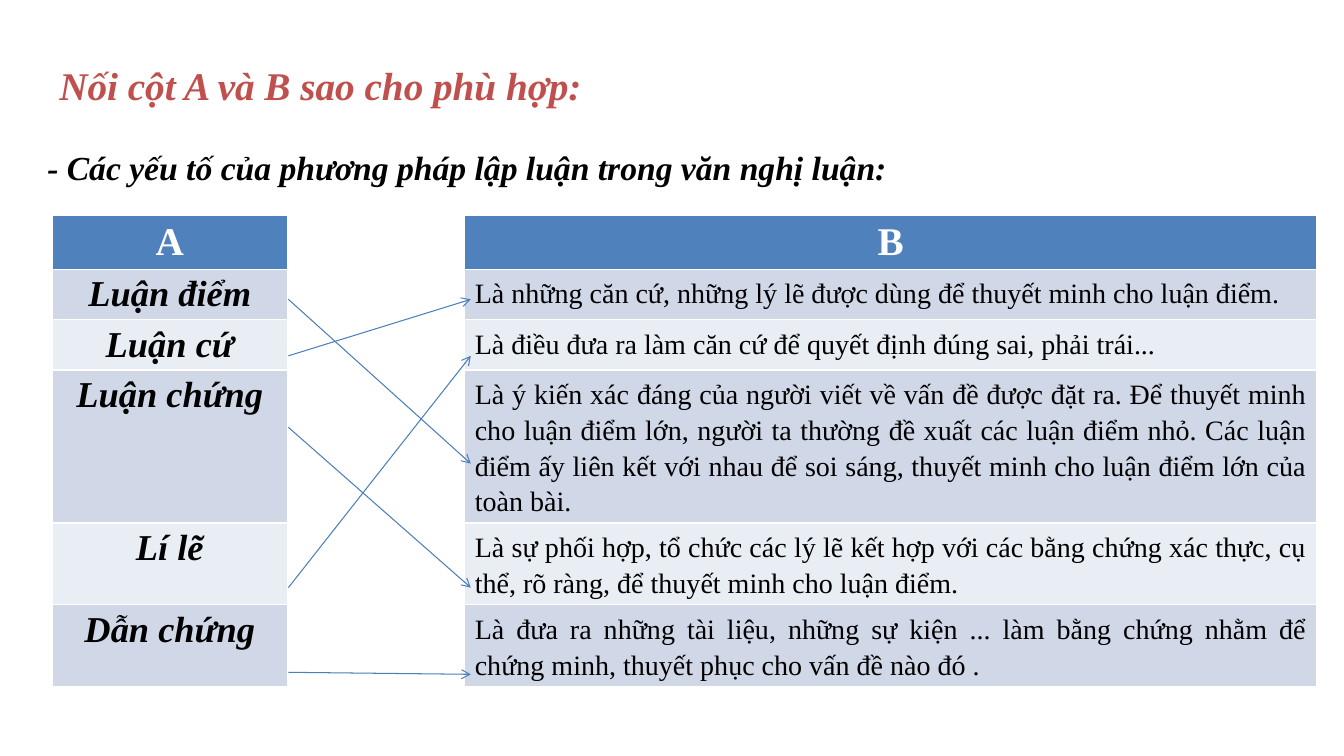
from dataclasses import dataclass

from lxml.etree import SubElement as Sub
from pptx import Presentation
from pptx.dml.color import RGBColor as Rgb
from pptx.enum.shapes import MSO_CONNECTOR as Link
from pptx.enum.text import MSO_AUTO_SIZE as Fit, PP_ALIGN as Align
from pptx.oxml.ns import qn
from pptx.util import Inches, Pt


@dataclass(frozen=True)
class Theme:
    font: str = "Times New Roman"
    white: str = "FFFFFF"
    black: str = "000000"
    red: str = "C0504D"
    blue: str = "4F81BD"
    line: str = "4B7EBC"
    bands: tuple = ("D0D8E8", "E9EDF4")
    title: int = 28
    term: int = 26
    lead: int = 24
    body: int = 20
    space: float = 1.15
    stroke: float = 0.75


class Page:
    """Draws on one slide; lengths are percent of its width or height."""

    def __init__(self, deck, theme):
        self.deck, self.theme = deck, theme
        self.slide = deck.slides.add_slide(deck.slide_layouts[6])
        self.shapes = self.slide.shapes

    def x(self, share):
        return round(self.deck.slide_width * share / 100)

    def y(self, share):
        return round(self.deck.slide_height * share / 100)

    def box(self, left, top, wide, high):
        return self.x(left), self.y(top), self.x(wide), self.y(high)

    def label(self, frame, text, size, color, bold=True, slant=True,
              align=Align.JUSTIFY):
        para = frame.paragraphs[0]
        para.text, para.alignment = text, align
        if align == Align.JUSTIFY:
            para.line_spacing = self.theme.space
        font = para.font
        font.name, font.size = self.theme.font, Pt(size)
        font.bold, font.italic = bold, slant
        font.color.rgb = Rgb.from_string(color)

    def text(self, area, text, size, color, wrap=True):
        frame = self.shapes.add_textbox(*self.box(*area)).text_frame
        frame.word_wrap = wrap
        frame.auto_size = Fit.SHAPE_TO_FIT_TEXT
        self.label(frame, text, size, color)

    def cell(self, cell, fill, text, *style, **more):
        cell.fill.solid()
        cell.fill.fore_color.rgb = Rgb.from_string(fill)
        if text:
            self.label(cell.text_frame, text, *style, **more)

    def table(self, area, cols, row, heads, pairs):
        """Two columns of text with one merged white gap between them."""
        look = self.theme
        shape = self.shapes.add_table(len(pairs) + 1, len(cols), *self.box(*area))
        grid = shape.table
        for col, wide in zip(grid.columns, cols):
            col.width = self.x(wide)
        for line in grid.rows:
            line.height = self.y(row)
        shape.height = self.y(area[3])
        for col, head in zip((0, 2), heads):
            self.cell(grid.cell(0, col), look.blue, head, look.title, look.white,
                      slant=False, align=Align.CENTER)
        for num, (term, sense) in enumerate(pairs):
            band = look.bands[num % 2]
            self.cell(grid.cell(num + 1, 0), band, term, look.term, look.black,
                      align=Align.CENTER)
            self.cell(grid.cell(num + 1, 2), band, sense, look.body, look.black,
                      bold=False, slant=False)
        gap = grid.cell(0, 1)
        gap.merge(grid.cell(len(pairs), 1))
        self.cell(gap, look.white, "")

    def arrow(self, left, top, right, end):
        link = self.shapes.add_connector(
            Link.STRAIGHT, self.x(left), self.y(top), self.x(right), self.y(end))
        link.line.color.rgb = Rgb.from_string(self.theme.line)
        link.line.width = Pt(self.theme.stroke)
        props = link._element.spPr
        Sub(props.find(qn("a:ln")), qn("a:tailEnd"), type="arrow")
        Sub(props, qn("a:effectLst"))


PAIRS = [
    ("Luận điểm",
     "Là những căn cứ, những lý lẽ được dùng để thuyết minh cho luận điểm."),
    ("Luận cứ",
     "Là điều đưa ra làm căn cứ để quyết định đúng sai, phải trái..."),
    ("Luận chứng",
     "Là ý kiến xác đáng của người viết về vấn đề được đặt ra. Để thuyết minh "
     "cho luận điểm lớn, người ta thường đề xuất các luận điểm nhỏ. Các luận "
     "điểm ấy liên kết với nhau để soi sáng, thuyết minh cho luận điểm lớn của "
     "toàn bài."),
    ("Lí lẽ",
     "Là sự phối hợp, tổ chức các lý lẽ kết hợp với các bằng chứng xác thực, cụ "
     "thể, rõ ràng, để thuyết minh cho luận điểm."),
    ("Dẫn chứng",
     "Là đưa ra những tài liệu, những sự kiện ... làm bằng chứng nhằm để "
     "chứng minh, thuyết phục cho vấn đề nào đó ."),
]
STARTS = (39.6, 47.07, 56.53, 77.73, 88.93)
ENDS = (61.33, 39.6, 77.73, 47.07, 89.2)


def main():
    deck = Presentation()
    deck.slide_width, deck.slide_height = Inches(13.33), Inches(7.5)
    look = Theme()
    page = Page(deck, look)
    page.table((3.9, 28.53, 94.07, 66.67), (17.48, 13.2, 63.39), 5.47,
               ("A", "B"), PAIRS)
    page.text((3.68, 6.53, 50.04, 8), "Nối cột A và B sao cho phù hợp:",
              look.title, look.red)
    page.text((2.78, 18, 64.59, 7.07),
              "- Các yếu tố của phương pháp lập luận trong văn nghị luận:",
              look.lead, look.black, wrap=False)
    for start, end in zip(STARTS, ENDS):
        page.arrow(21.46, start, 35.03, end)
    deck.save("out.pptx")


if __name__ == "__main__":
    main()
